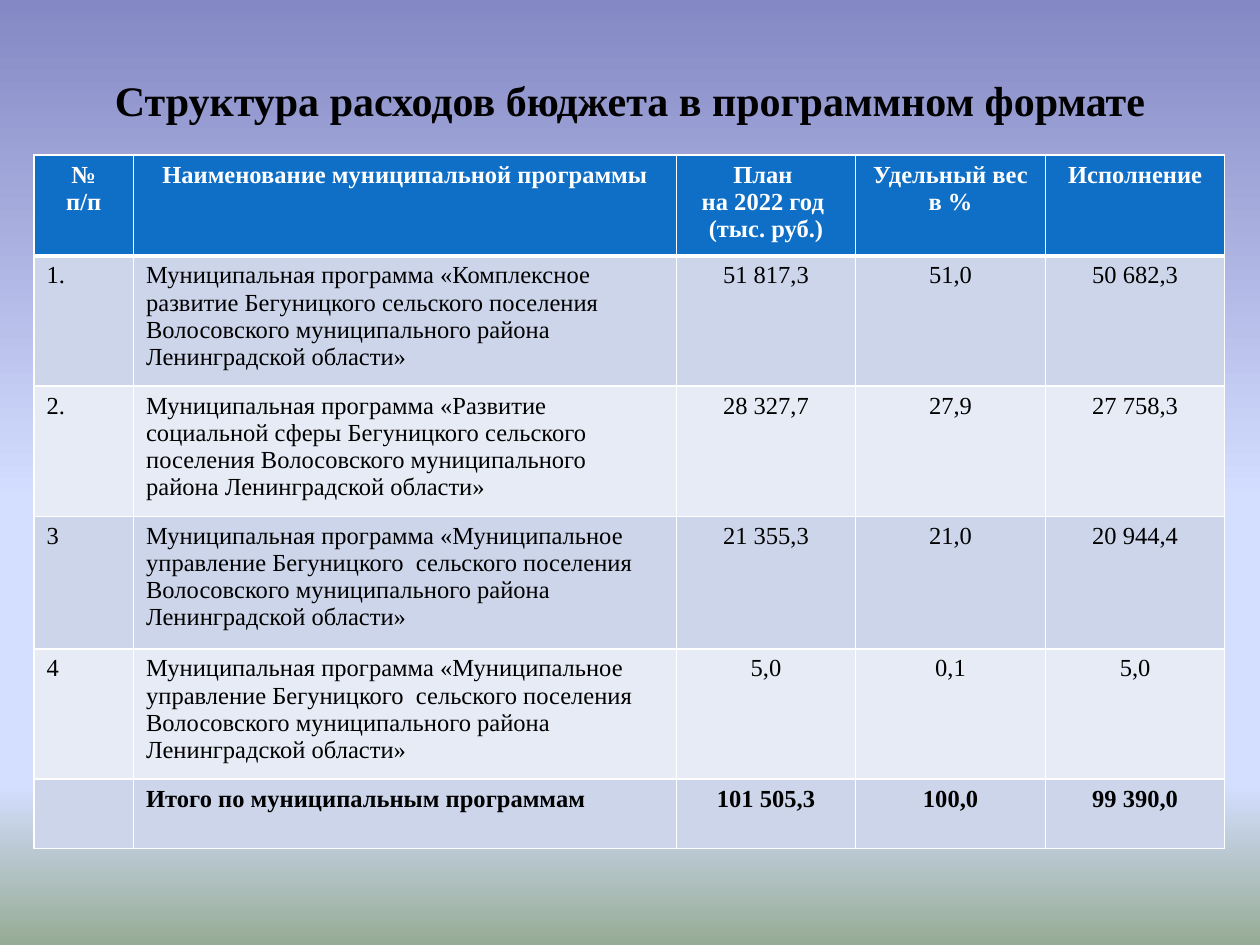
"""Builds a slide with a table of budget spending by municipal programme."""
from lxml import etree
from pptx import Presentation
from pptx.dml.color import RGBColor
from pptx.enum.text import MSO_ANCHOR, PP_ALIGN
from pptx.oxml.ns import qn
from pptx.util import Inches, Pt

LEFT, CENTER = PP_ALIGN.LEFT, PP_ALIGN.CENTER
BOTTOM = MSO_ANCHOR.BOTTOM
BLACK = RGBColor(0x00, 0x00, 0x00)
WHITE = RGBColor(0xFF, 0xFF, 0xFF)
HEADER_BLUE = RGBColor(0x0F, 0x6F, 0xC6)
BAND_DARK = RGBColor(0xCC, 0xD5, 0xEA)
BAND_LIGHT = RGBColor(0xE7, 0xEB, 0xF5)
SKY = RGBColor(0x84, 0x88, 0xC4)
HAZE = RGBColor(0xD4, 0xDE, 0xFF)
GRASS = RGBColor(0x96, 0xAB, 0x94)

GRADIENT_STOPS = [(0, SKY), (53, HAZE), (83, HAZE), (100, GRASS)]
COLUMN_WIDTHS = [0.79, 4.31, 1.42, 1.51, 1.42]
ROW_HEIGHTS = [0.71, 1.02, 1.01, 1.05, 1.02, 0.55]
DISTRICT = "Волосовского муниципального района Ленинградской области»"
MANAGEMENT = ("Муниципальная программа «Муниципальное управление Бегуницкого  "
              f"сельского поселения {DISTRICT}")
ROWS = [
    ["№\nп/п", "Наименование муниципальной программы",
     "План \nна 2022 год \n(тыс. руб.)", "Удельный вес в %", "Исполнение"],
    ["1.", "Муниципальная программа «Комплексное развитие Бегуницкого "
     f"сельского поселения {DISTRICT}", "51 817,3", "51,0", "50 682,3"],
    ["2.", "Муниципальная программа «Развитие социальной сферы Бегуницкого "
     f"сельского поселения {DISTRICT}", "28 327,7", "27,9", "27 758,3"],
    ["3", MANAGEMENT, "21 355,3", "21,0", "20 944,4"],
    ["4", MANAGEMENT, "5,0", "0,1", "5,0"],
    ["", "Итого по муниципальным программам", "101 505,3", "100,0", "99 390,0"],
]


def write_text(text_frame, text, alignment, size, color, bold):
    text_frame.text = text
    font_values = {"name": "Times New Roman", "size": Pt(size), "bold": bold}
    for paragraph in text_frame.paragraphs:
        paragraph.alignment = alignment
        for name, value in font_values.items():
            setattr(paragraph.font, name, value)
        for run in paragraph.runs:
            for name, value in font_values.items():
                setattr(run.font, name, value)
            run.font.color.rgb = color


def set_borders(cell, widths):
    properties = cell._tc.get_or_add_tcPr()
    for index, (side, width) in enumerate(widths.items()):
        line = etree.Element(qn(f"a:ln{side}"), w=str(Pt(width)))
        fill = etree.SubElement(line, qn("a:solidFill"))
        etree.SubElement(fill, qn("a:srgbClr"), val=str(WHITE))
        properties.insert(index, line)


presentation = Presentation()
presentation.slide_width = Inches(10)
presentation.slide_height = Inches(7.5)
slide = presentation.slides.add_slide(presentation.slide_layouts[6])

background = slide.background.fill
background.gradient()
background.gradient_angle = 270
stop_list = slide.element.find(".//" + qn("a:gsLst"))
for stop in list(stop_list):
    stop_list.remove(stop)
for position, color in GRADIENT_STOPS:
    stop = etree.SubElement(stop_list, qn("a:gs"), pos=str(position * 1000))
    etree.SubElement(stop, qn("a:srgbClr"), val=str(color))

title = slide.shapes.add_textbox(Inches(0.5), Inches(0.44), Inches(9), Inches(0.55))
title_format = {"word_wrap": True, "vertical_anchor": BOTTOM, "margin_left": 0,
                "margin_right": 0, "margin_top": Inches(0.05), "margin_bottom": 0}
for name, value in title_format.items():
    setattr(title.text_frame, name, value)
write_text(title.text_frame, "Структура расходов бюджета в программном формате",
           CENTER, 24, BLACK, True)

table = slide.shapes.add_table(
    len(ROWS), len(COLUMN_WIDTHS), Inches(0.27), Inches(1.23),
    Inches(sum(COLUMN_WIDTHS)), Inches(sum(ROW_HEIGHTS))).table
for column, width in zip(table.columns, COLUMN_WIDTHS):
    column.width = Inches(width)
for row, height in zip(table.rows, ROW_HEIGHTS):
    row.height = Inches(height)

for row_index, texts in enumerate(ROWS):
    is_header = row_index == 0
    is_total = row_index == len(ROWS) - 1
    band = BAND_DARK if row_index % 2 else BAND_LIGHT
    borders = {"L": 1, "R": 1, "T": 3 if row_index == 1 else 1, "B": 3 if is_header else 1}
    for column_index, text in enumerate(texts):
        cell = table.cell(row_index, column_index)
        cell.fill.solid()
        cell.fill.fore_color.rgb = HEADER_BLUE if is_header else band
        set_borders(cell, borders)
        write_text(cell.text_frame, text,
                   CENTER if is_header or column_index > 1 else LEFT, 14,
                   WHITE if is_header else BLACK, is_header or is_total)

presentation.save("out.pptx")
